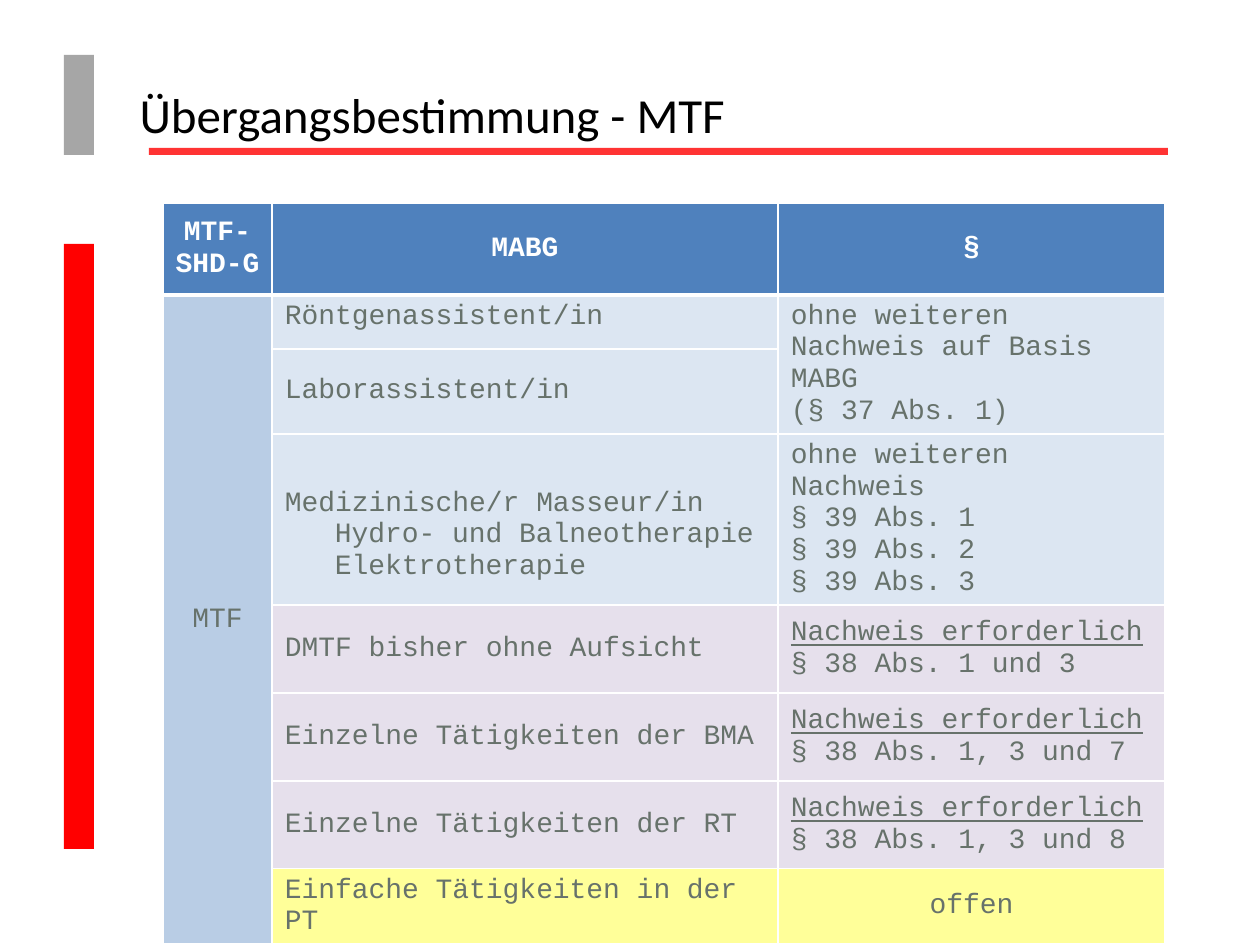
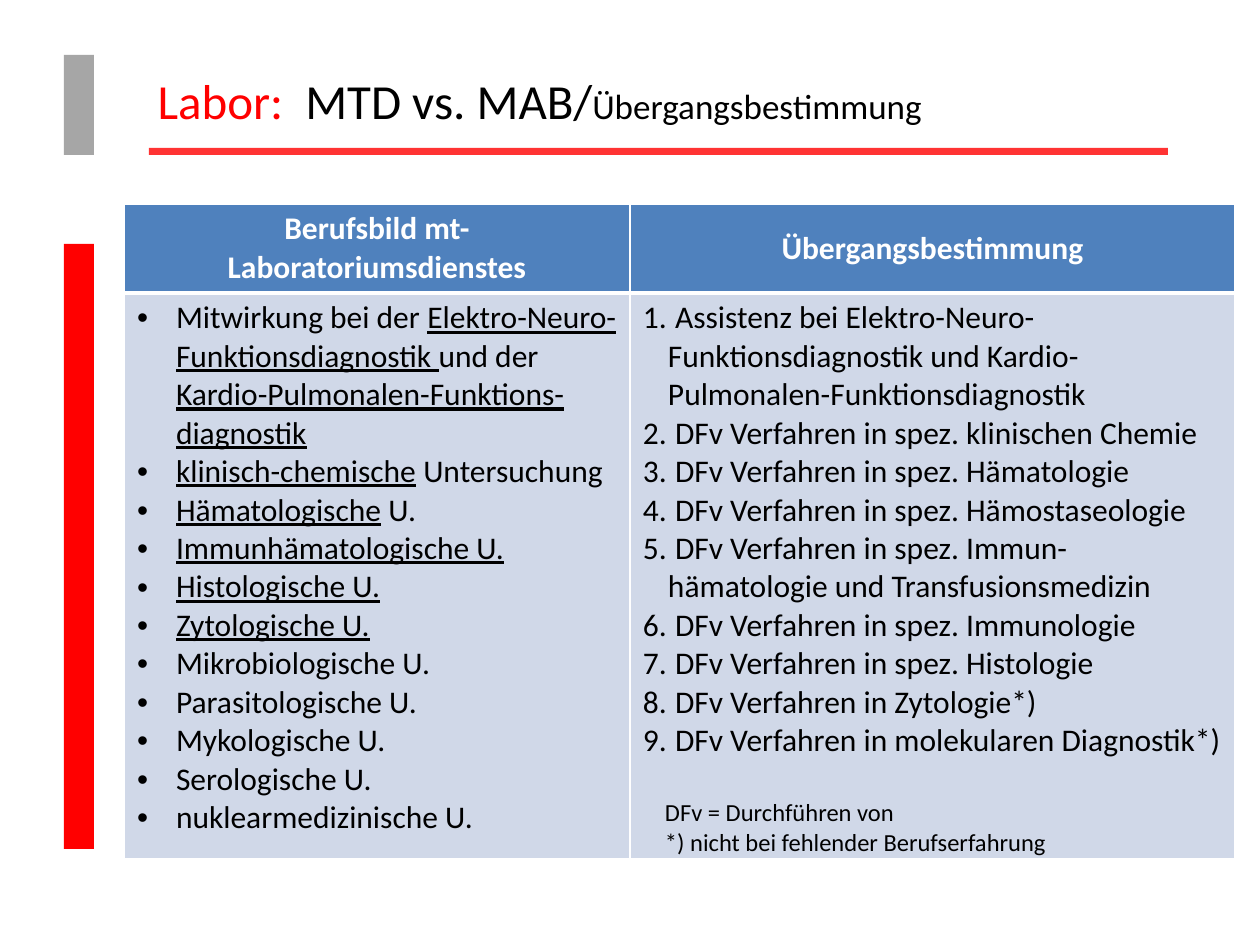
from lxml.etree import SubElement
from pptx import Presentation
from pptx.dml.color import RGBColor
from pptx.enum.shapes import MSO_SHAPE
from pptx.enum.text import MSO_ANCHOR, MSO_AUTO_SIZE, PP_ALIGN
from pptx.oxml.ns import qn
from pptx.util import Emu, Pt

PIXELS_PER_INCH = 126
BLACK, WHITE, RED = "000000", "FFFFFF", "FF0000"
GRAY, RULE_RED, HEADER_BLUE = "A6A6A6", "FF3333", "4F81BD"
SLATE, SIDE_BLUE, PALE_BLUE = "67726B", "B9CDE5", "DCE6F2"
LILAC, YELLOW, BODY_BLUE = "E6E0EC", "FFFF99", "D0D8E8"
SANS, MONO = "Calibri", "Courier New"

BANDS = [
    ((64, 55, 30, 100), GRAY),
    ((64, 244, 30, 605), RED),
    ((149, 148, 1019, 7), RULE_RED),
]

TRANSITIONS = [
    (PALE_BLUE, 54, ["Röntgenassistent/in"],
     ["ohne weiteren Nachweis auf Basis MABG\n(§ 37 Abs. 1)"]),
    (PALE_BLUE, 85, ["Laborassistent/in"], []),
    (PALE_BLUE, 171,
     ["Medizinische/r Masseur/in", "Hydro- und Balneotherapie", "Elektrotherapie"],
     ["ohne weiteren Nachweis\n§ 39 Abs. 1", "§ 39 Abs. 2", "§ 39 Abs. 3"]),
    (LILAC, 88, ["DMTF bisher ohne Aufsicht"],
     ["_Nachweis erforderlich_\n§ 38 Abs. 1 und 3"]),
    (LILAC, 88, ["Einzelne Tätigkeiten der BMA"],
     ["_Nachweis erforderlich_\n§ 38 Abs. 1, 3 und 7"]),
    (LILAC, 88, ["Einzelne Tätigkeiten der RT"],
     ["_Nachweis erforderlich_\n§ 38 Abs. 1, 3 und 8"]),
    (YELLOW, 75, ["Einfache Tätigkeiten in der PT"], ["offen"]),
]

LABORATORY_DUTIES = [
    "Mitwirkung bei der _Elektro-Neuro-Funktionsdiagnostik _und der "
    "_Kardio-Pulmonalen-Funktions-diagnostik_",
    "_klinisch-chemische_ Untersuchung",
    "_Hämatologische_ U.",
    "_Immunhämatologische U._",
    "_Histologische U._",
    "_Zytologische U._",
    "Mikrobiologische U.",
    "Parasitologische U.",
    "Mykologische U.",
    "Serologische U.",
    "nuklearmedizinische U.",
]

PROCEDURES = ["Assistenz bei Elektro-Neuro-Funktionsdiagnostik und "
              "Kardio-Pulmonalen-Funktionsdiagnostik"] + [
    f"DFv Verfahren in {field}" for field in (
        "spez. klinischen Chemie",
        "spez. Hämatologie",
        "spez. Hämostaseologie",
        "spez. Immun-hämatologie und Transfusionsmedizin",
        "spez. Immunologie",
        "spez. Histologie",
        "Zytologie*)",
        "molekularen Diagnostik*)",
    )
]


def px(length):
    return Emu(round(length * 914400 / PIXELS_PER_INCH))


def color(value):
    return RGBColor.from_string(value)


def add_span(para, text, font=SANS, size=18, ink=BLACK, bold=False, underline=False):
    for index, line in enumerate(text.split("\n")):
        if index:
            para.add_line_break()
        if line:
            span = para.add_run()
            span.text = line
            span.font.name = font
            span.font.size = Pt(size)
            span.font.bold = bold
            span.font.underline = underline
            span.font.color.rgb = color(ink)


def write_para(frame, text, align=PP_ALIGN.LEFT, indent=0, bullet=None, before=0, **style):
    first = frame.paragraphs[0]
    para = frame.add_paragraph() if first.runs else first
    para.alignment = align
    if before:
        para.space_before = Pt(before)
    properties = para._p.get_or_add_pPr()
    properties.set("marL", str(px(indent)))
    properties.set("indent", str(px(-indent if bullet else 0)))
    if bullet == "number":
        SubElement(properties, qn("a:buAutoNum"), type="arabicPeriod")
    elif bullet:
        SubElement(properties, qn("a:buFont"), typeface="Arial")
        SubElement(properties, qn("a:buChar"), char=bullet)
    for index, part in enumerate(text.split("_")):
        add_span(para, part, underline=index % 2 == 1, **style)


def add_page(deck, title_box, spans):
    page = deck.slides.add_slide(deck.slide_layouts[5])
    for box, fill in BANDS:
        band = page.shapes.add_shape(MSO_SHAPE.RECTANGLE, *map(px, box))
        band.shadow.inherit = False
        band.fill.solid()
        band.fill.fore_color.rgb = color(fill)
        band.line.fill.background()
    title = page.shapes.title
    title.left, title.top, title.width, title.height = map(px, title_box)
    frame = title.text_frame
    frame.word_wrap = True
    frame.auto_size = MSO_AUTO_SIZE.NONE
    frame.vertical_anchor = MSO_ANCHOR.MIDDLE
    para = frame.paragraphs[0]
    para.alignment = PP_ALIGN.LEFT
    for text, style in spans:
        add_span(para, text, **style)
    return page


def set_border(cell, side, width):
    properties = cell._tc.get_or_add_tcPr()
    line = SubElement(properties, qn(f"a:ln{side}"), w=str(Pt(width)))
    fill = SubElement(line, qn("a:solidFill"))
    SubElement(fill, qn("a:srgbClr"), val=WHITE)


def format_cell(cell, row, fill):
    for side in "LRTB":
        under_header = (row, side) in ((0, "B"), (1, "T"))
        set_border(cell, side, 3 if under_header else 1)
    cell.fill.solid()
    cell.fill.fore_color.rgb = color(fill)
    cell.margin_left = cell.margin_right = px(13)
    cell.margin_top = cell.margin_bottom = px(6)
    cell.vertical_anchor = MSO_ANCHOR.MIDDLE


def add_grid(page, left, top, widths, heights, fills, headers, **style):
    box = map(px, (left, top, sum(widths), sum(heights)))
    table = page.shapes.add_table(len(heights), len(widths), *box).table
    table.horz_banding = False
    for column, width in zip(table.columns, widths):
        column.width = px(width)
    for row, height in zip(table.rows, heights):
        row.height = px(height)
    for row, row_fills in enumerate(fills):
        for column, fill in enumerate(row_fills):
            format_cell(table.cell(row, column), row, fill)
    for column, header in enumerate(headers):
        write_para(table.cell(0, column).text_frame, header,
                   align=PP_ALIGN.CENTER, ink=WHITE, bold=True, **style)
    return table


def add_transition_table(page, left, top):
    style = dict(font=MONO, size=16)
    heights = [92] + [height for _, height, _, _ in TRANSITIONS]
    fills = [[HEADER_BLUE] * 3] + [[SIDE_BLUE, fill, fill] for fill, *_ in TRANSITIONS]
    table = add_grid(page, left, top, (109, 506, 387), heights, fills,
                     ("MTF-SHD-G", "MABG", "§"), **style)
    law = table.cell(0, 0)
    law.margin_left = law.margin_right = px(8)
    table.cell(1, 0).merge(table.cell(len(TRANSITIONS), 0))
    table.cell(1, 2).merge(table.cell(2, 2))
    style["ink"] = SLATE
    write_para(table.cell(1, 0).text_frame, "MTF", align=PP_ALIGN.CENTER, **style)
    for row, (_, _, activities, rules) in enumerate(TRANSITIONS, 1):
        for index, activity in enumerate(activities):
            write_para(table.cell(row, 1).text_frame, activity,
                       indent=50 if index else 0, **style)
        for rule in rules:
            align = PP_ALIGN.CENTER if rule == "offen" else PP_ALIGN.LEFT
            write_para(table.cell(row, 2).text_frame, rule, align=align, **style)
    table.cell(1, 1).vertical_anchor = MSO_ANCHOR.TOP
    table.cell(1, 2).vertical_anchor = MSO_ANCHOR.TOP
    table.cell(3, 1).margin_top = px(38)


def add_laboratory_table(page, left, top):
    table = add_grid(page, left, top, (506, 605), (88, 562),
                     [[HEADER_BLUE] * 2, [BODY_BLUE] * 2],
                     ("Berufsbild mt-Laboratoriumsdienstes", "Übergangsbestimmung"))
    duties, procedures = table.cell(1, 0), table.cell(1, 1)
    duties.vertical_anchor = procedures.vertical_anchor = MSO_ANCHOR.TOP
    procedures.margin_bottom = 0
    for duty in LABORATORY_DUTIES:
        write_para(duties.text_frame, duty, indent=39, bullet="•")
    for procedure in PROCEDURES:
        write_para(procedures.text_frame, f" {procedure}", indent=25, bullet="number")
    write_para(procedures.text_frame,
               "DFv = Durchführen von\n*) nicht bei fehlender Berufserfahrung",
               indent=22, before=22, size=14)


def main():
    deck = Presentation()
    deck.slide_width, deck.slide_height = px(1260), px(945)
    page = add_page(deck, (127, 85, 1079, 57),
                    [("Übergangsbestimmung - MTF", dict(size=28))])
    add_transition_table(page, 163, 203)
    page = add_page(deck, (145, 61, 863, 77), [
        ("Labor:  ", dict(size=28, ink=RED)),
        ("MTD vs. MAB/", dict(size=28)),
        ("Übergangsbestimmung", dict(size=20)),
    ])
    add_laboratory_table(page, 124, 204)
    deck.save("out.pptx")


if __name__ == "__main__":
    main()
